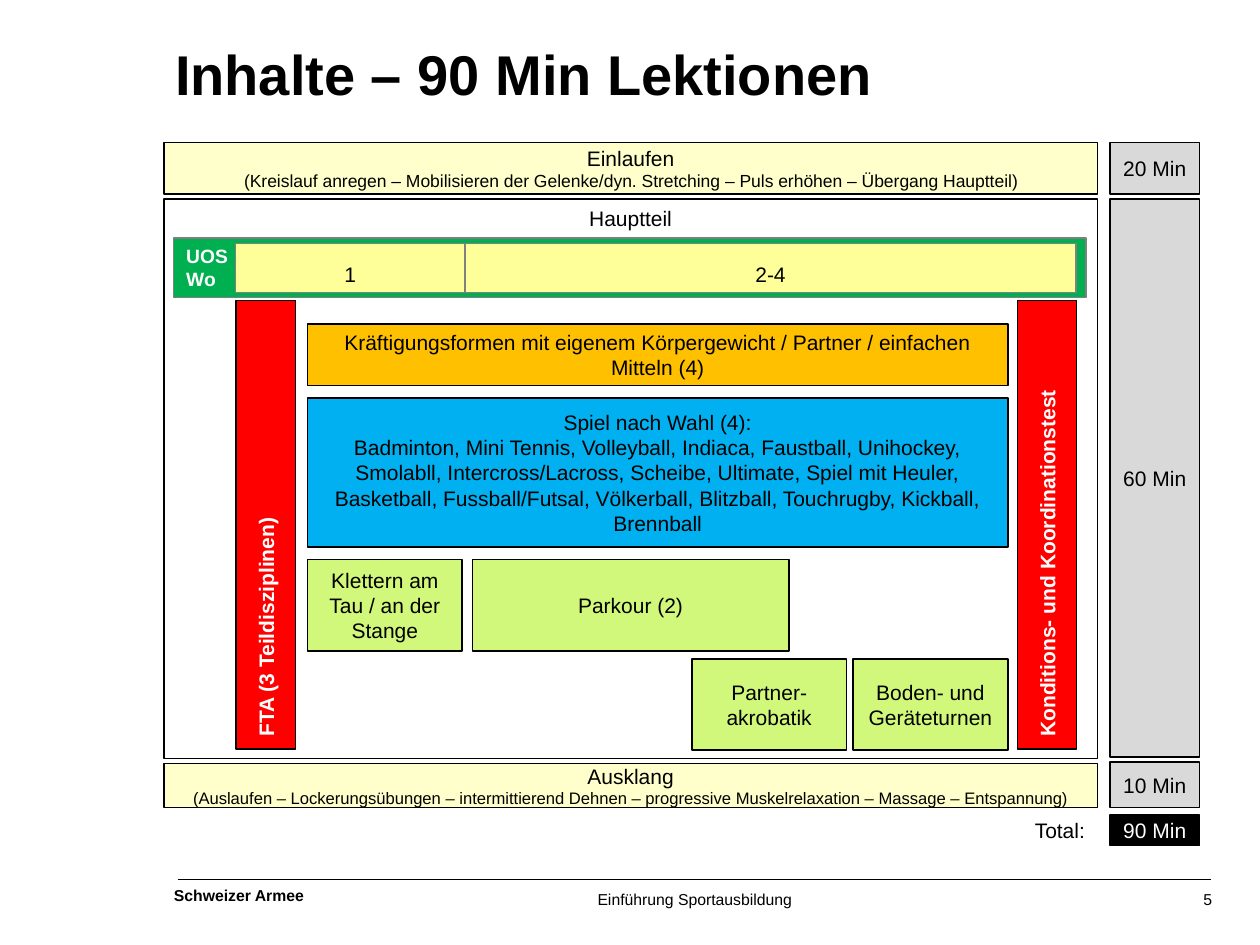
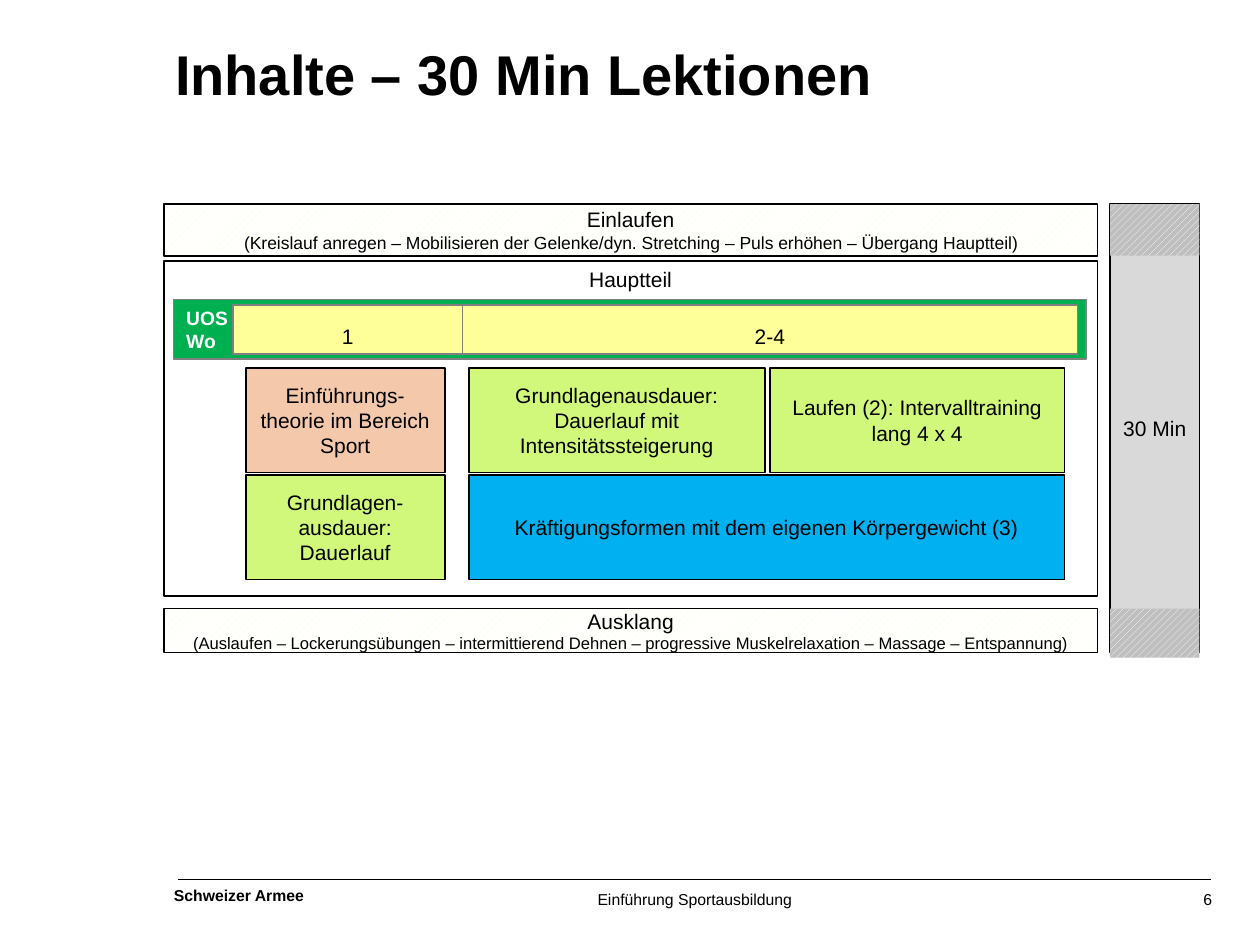
"""Build two slides on the contents of 90 and 30 minute sport lessons."""
from dataclasses import dataclass

from lxml import etree
from pptx import Presentation
from pptx import util as u
from pptx.dml import color
from pptx.enum import dml, shapes, text
from pptx.oxml import ns
from pptx.shapes.autoshape import Shape
from pptx.slide import Slide

PIXELS_PER_INCH = 100
FONT = "Arial"
BLACK, WHITE, GRAY, RED = "000000", "FFFFFF", "D9D9D9", "FF0000"
CREAM, YELLOW, ORANGE, PEACH = "FFFFCC", "FFFF99", "FFC000", "F4C8AA"
GREEN, LIME, BLUE = "00B050", "D1F77B", "00B0F0"
BORDER, HATCH_GRAY = "808080", "BFBFBF"
LEFT, CENTER, RIGHT = text.PP_ALIGN.LEFT, text.PP_ALIGN.CENTER, text.PP_ALIGN.RIGHT
TOP, MIDDLE = text.MSO_ANCHOR.TOP, text.MSO_ANCHOR.MIDDLE

FRAME_LEFT, FRAME_WIDTH = 130, 741
TIME_LEFT, TIME_WIDTH = 881, 71
WARMUP_HEIGHT, CLOSING_HEIGHT = 41, 35
MAIN_OFFSET, BAND_OFFSET = 45, 76
FIRST_WEEK_WIDTH = 182
WARMUP = ("Einlaufen\n(Kreislauf anregen – Mobilisieren der Gelenke/dyn. Stretching – "
          "Puls erhöhen – Übergang Hauptteil)")
CLOSING = ("Ausklang\n(Auslaufen – Lockerungsübungen – intermittierend Dehnen – "
           "progressive Muskelrelaxation – Massage – Entspannung)")
GAMES = ("Spiel nach Wahl (4):\nBadminton, Mini Tennis, Volleyball, Indiaca, Faustball, "
         "Unihockey, Smolabll, Intercross/Lacross, Scheibe, Ultimate, Spiel mit Heuler, "
         "Basketball, Fussball/Futsal, Völkerball, Blitzball, Touchrugby, Kickball, Brennball")


@dataclass(frozen=True)
class Block:
    """A filled rectangle with its text, in px."""
    left: int
    top: int
    width: int
    height: int
    content: str = ""
    fill: str | None = None
    line: str | None = BLACK
    weight: float = 1
    hatch: str | None = None
    rotation: int = 0


@dataclass(frozen=True)
class Lesson:
    """The frame of one lesson and the blocks inside it."""
    title: str
    number: int
    top: int
    main_height: int
    closing_top: int
    weeks_left: int
    weeks_right: int
    hatch: str | None
    times: list[Block]
    topics: list[Block]
    tests: list[Block]


def px(length: int) -> u.Emu:
    """Turn px into EMU."""
    return u.Emu(length * u.Inches(1) // PIXELS_PER_INCH)


def rgb(value: str) -> color.RGBColor:
    """Turn a hex string into a colour."""
    return color.RGBColor.from_string(value)


def write(shape: Shape, content: str, *, size: float = 12, detail_size: float | None = None,
          ink: str = BLACK, bold: bool = False, align: text.PP_ALIGN = CENTER,
          anchor: text.MSO_ANCHOR = MIDDLE, inset: tuple[int, int] = (10, 5),
          wrap: bool = True, spacing: float = 1.0) -> None:
    """Write the lines of a text into a shape."""
    frame = shape.text_frame
    frame.auto_size = text.MSO_AUTO_SIZE.NONE
    frame.word_wrap = wrap
    frame.vertical_anchor = anchor
    frame.margin_left = frame.margin_right = px(inset[0])
    frame.margin_top = frame.margin_bottom = px(inset[1])
    frame.text = content
    for index, paragraph in enumerate(frame.paragraphs):
        paragraph.alignment = align
        paragraph.line_spacing = spacing
        for run in paragraph.runs:
            run.font.name = FONT
            run.font.size = u.Pt(detail_size if index and detail_size else size)
            run.font.bold = bold
            run.font.color.rgb = rgb(ink)


def draw(slide: Slide, block: Block, **text_format) -> Shape:
    """Draw a block and its text."""
    shape = slide.shapes.add_shape(shapes.MSO_SHAPE.RECTANGLE, px(block.left), px(block.top),
                                   px(block.width), px(block.height))
    shape.shadow.inherit = False
    shape.rotation = block.rotation
    if block.hatch:
        shape.fill.patterned()
        shape.fill.pattern = dml.MSO_PATTERN.WIDE_UPWARD_DIAGONAL
        shape.fill.fore_color.rgb = rgb(block.hatch)
        shape.fill.back_color.rgb = rgb(block.fill)
    elif block.fill:
        shape.fill.solid()
        shape.fill.fore_color.rgb = rgb(block.fill)
    else:
        shape.fill.background()
    if block.line:
        shape.line.color.rgb = rgb(block.line)
        shape.line.width = u.Pt(block.weight)
    else:
        shape.line.fill.background()
    if block.content:
        write(shape, block.content, **text_format)
    return shape


def add_label(slide: Slide, left: int, top: int, width: int, height: int,
              content: str, **text_format) -> None:
    """Add a text box."""
    write(slide.shapes.add_textbox(px(left), px(top), px(width), px(height)),
          content, **text_format)


def add_footer(slide: Slide, number: int) -> None:
    """Add the rule, the two footer texts and the slide number."""
    rule = slide.shapes.add_connector(shapes.MSO_CONNECTOR.STRAIGHT,
                                      px(961), px(698), px(141), px(698))
    rule.line.color.rgb = rgb(BLACK)
    rule.line.width = u.Pt(0.75)
    etree.SubElement(rule._element.spPr, ns.qn("a:effectLst"))
    for left, width, height, content, bold in ((135, 111, 21, "Schweizer Armee", True),
                                               (468, 168, 43, "Einführung Sportausbildung", False)):
        shape = slide.shapes.add_shape(shapes.MSO_SHAPE.OCTAGON, px(left), px(700),
                                       px(width), px(height))
        shape.adjustments[0] = 0.29
        shape.shadow.inherit = False
        shape.fill.background()
        shape.line.fill.background()
        write(shape, content, size=9, bold=bold, align=LEFT, anchor=TOP,
              inset=(0, 0), wrap=False)
    add_label(slide, 937, 706, 25, 15, str(number), size=9, align=RIGHT,
              anchor=TOP, inset=(0, 0))


def add_weeks(slide: Slide, lesson: Lesson) -> None:
    """Add the green band with the week cells."""
    top = lesson.top + BAND_OFFSET
    draw(slide, Block(138, top, 724, 47, "UOS\nWo", GREEN, BORDER, 0.75),
         size=11, ink=WHITE, bold=True, align=LEFT)
    split = lesson.weeks_left + FIRST_WEEK_WIDTH
    for left, right, week in ((lesson.weeks_left, split, "1"),
                              (split, lesson.weeks_right, "2-4")):
        draw(slide, Block(left, top + 4, right - left, 39, week, YELLOW, BORDER, 0.75),
             spacing=1.5)


def add_lesson(presentation: Presentation, lesson: Lesson) -> Slide:
    """Add the slide of one lesson."""
    slide = presentation.slides.add_slide(presentation.slide_layouts[5])
    title = slide.shapes.title
    title.left, title.top, title.width, title.height = map(px, (139, 31, 816, 108))
    write(title, lesson.title, size=32, bold=True, align=LEFT, anchor=TOP, inset=(0, 0))
    add_footer(slide, lesson.number)
    paper = WHITE if lesson.hatch else CREAM
    draw(slide, Block(FRAME_LEFT, lesson.top, FRAME_WIDTH, WARMUP_HEIGHT, WARMUP, paper,
                      hatch=lesson.hatch), detail_size=10)
    draw(slide, Block(FRAME_LEFT, lesson.closing_top, FRAME_WIDTH, CLOSING_HEIGHT, CLOSING, paper,
                      hatch=lesson.hatch), detail_size=9.5)
    draw(slide, Block(FRAME_LEFT, lesson.top + MAIN_OFFSET, FRAME_WIDTH, lesson.main_height,
                      "Hauptteil"), anchor=TOP)
    add_weeks(slide, lesson)
    for block in lesson.times:
        draw(slide, block, ink=WHITE if block.fill == BLACK else BLACK)
    for block in lesson.topics:
        draw(slide, block)
    for block in lesson.tests:
        draw(slide, block, ink=WHITE, bold=True, align=LEFT)
    return slide


def time_block(top: int, height: int, content: str, fill: str = GRAY) -> Block:
    """Describe a block of the time column."""
    return Block(TIME_LEFT, top, TIME_WIDTH, height, content, fill)


def hatched_time(top: int, height: int) -> Block:
    """Describe a hatched end of the time column."""
    return Block(TIME_LEFT, top, TIME_WIDTH, height, fill=HATCH_GRAY, line=None, hatch=WHITE)


def test_block(left: int, content: str) -> Block:
    """Describe an upright test bar."""
    return Block(left, 393, 356, 47, content, RED, rotation=270)


LONG_LESSON = Lesson(
    "Inhalte – 90 Min Lektionen", 5, 113, 444, 606, 187, 854, None,
    times=[time_block(113, 41, "20 Min"), time_block(158, 443, "60 Min"),
           time_block(605, 36, "10 Min"), time_block(647, 24, "90 Min", BLACK)],
    topics=[
        Block(244, 257, 556, 49, "Kräftigungsformen mit eigenem Körpergewicht / Partner / "
              "einfachen Mitteln (4)", ORANGE),
        Block(244, 316, 556, 118, GAMES, BLUE),
        Block(244, 444, 123, 73, "Klettern am Tau / an der Stange", LIME),
        Block(375, 444, 251, 73, "Parkour (2)", LIME),
        Block(549, 523, 123, 72, "Partner-akrobatik", LIME),
        Block(677, 523, 123, 72, "Boden- und Geräteturnen", LIME)],
    tests=[test_block(33, "FTA (3 Teildisziplinen)"),
           test_block(653, "Konditions- und Koordinationstest")])

SHORT_LESSON = Lesson(
    "Inhalte – 30 Min Lektionen", 6, 162, 266, 483, 185, 855, CREAM,
    times=[time_block(162, 356, "30 Min"), hatched_time(162, 41), hatched_time(483, 39)],
    topics=[
        Block(195, 292, 158, 83, "Einführungs-theorie im Bereich Sport", PEACH),
        Block(372, 292, 235, 83, "Grundlagenausdauer: Dauerlauf mit Intensitätssteigerung", LIME),
        Block(611, 292, 234, 83, "Laufen (2): Intervalltraining lang 4 x 4", LIME),
        Block(195, 377, 158, 83, "Grundlagen-ausdauer: Dauerlauf", LIME),
        Block(372, 377, 473, 83, "Kräftigungsformen mit dem eigenen Körpergewicht (3)", BLUE)],
    tests=[])


def main() -> None:
    """Build and save the presentation."""
    presentation = Presentation()
    presentation.slide_width, presentation.slide_height = px(1000), px(750)
    long_slide = add_lesson(presentation, LONG_LESSON)
    add_label(long_slide, 800, 647, 71, 24, "Total:", align=RIGHT)
    add_lesson(presentation, SHORT_LESSON)
    presentation.save("out.pptx")


if __name__ == "__main__":
    main()
